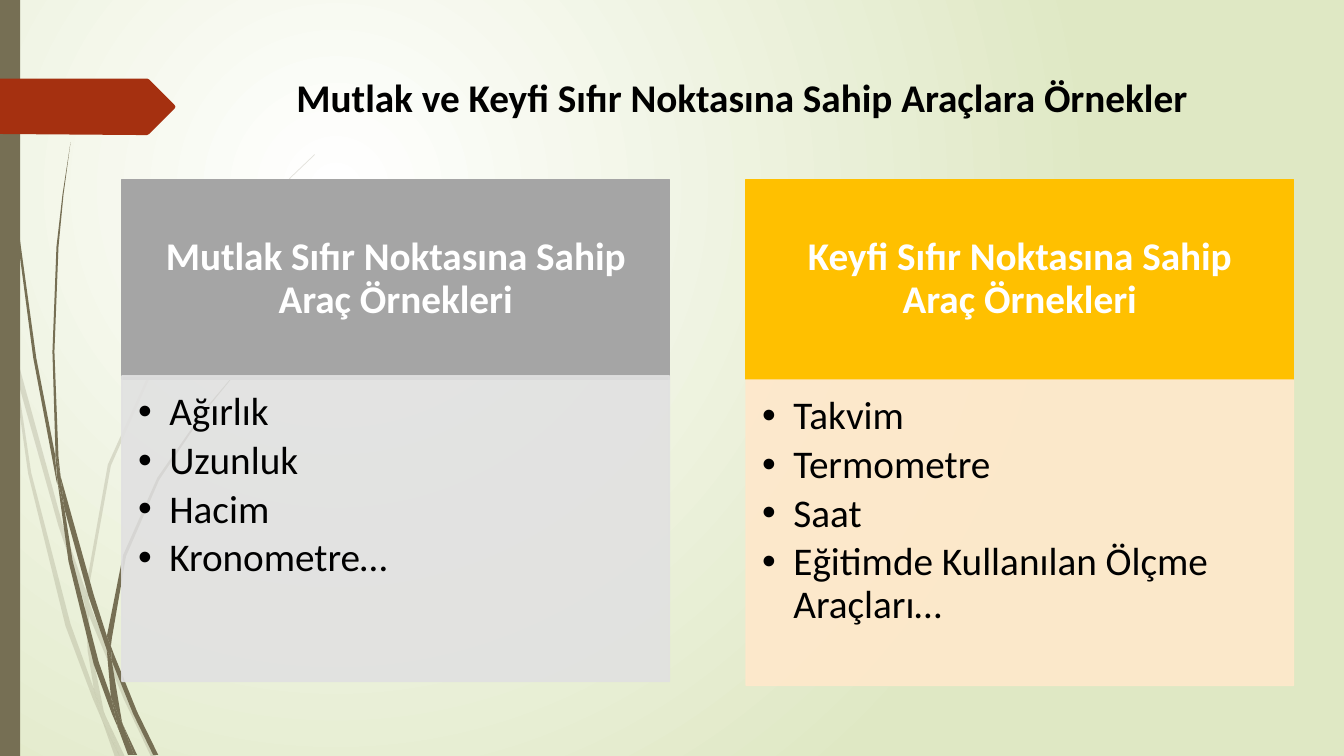
from lxml import etree
from pptx import Presentation, util as u
from pptx.dml.color import RGBColor
from pptx.enum import shapes, text
from pptx.oxml import ns

PX = 9144  # EMU in one px, 100 px to the inch
FONT, SIZE = "Calibri", 28
COLORS = {
    "glow": "FFFFFF", "meadow": "DFE8C4", "reed": "766F54", "ribbon": "A53010",
    "black": "000000", "white": "FFFFFF", "gray": "A5A5A5", "pale_gray": "E1E1E1",
    "amber": "FFC000", "pale_amber": "FFE8CB",
}

# Outlines of the reeds, as corner points in px
PALE_REEDS = [
    [(11, 350), (9, 322), (0, 282), (0, 299), (10, 344)],
    [(58, 522), (84, 599), (85, 586), (62, 520), (14, 345), (17, 376)],
    [(92, 607), (88, 596), (88, 610), (123, 694), (150, 751), (155, 751), (127, 692)],
    [(119, 751), (124, 751), (105, 711)],
    [(93, 683), (70, 619), (31, 469), (17, 376), (11, 350), (28, 470), (65, 621),
     (92, 693), (101, 714), (99, 707)],
    [(84, 599), (87, 646), (93, 683), (96, 692), (105, 711), (103, 706), (91, 646),
     (88, 610), (88, 608)],
    [(88, 584), (110, 462), (160, 349), (229, 245), (268, 198), (290, 175), (312, 154),
     (312, 153), (289, 175), (268, 197), (228, 244), (158, 348), (107, 461), (85, 584),
     (85, 586), (88, 596)],
    [(101, 714), (114, 751), (119, 751)],
    [(88, 608), (88, 610), (88, 596), (85, 586), (84, 599)],
    [(96, 692), (93, 683), (99, 707), (101, 714), (119, 751), (105, 711)],
]
DARK_REEDS = [
    [(7, 110), (17, 233), (33, 355), (56, 477), (57, 481), (55, 457), (55, 453),
     (36, 355), (19, 232), (8, 109), (5, 48), (4, 0), (3, 0), (4, 48)],
    [(88, 592), (106, 645), (106, 633), (106, 631), (93, 590), (60, 472), (64, 505)],
    [(113, 649), (110, 641), (111, 656), (132, 708), (152, 749), (157, 749), (136, 706)],
    [(110, 691), (98, 657), (72, 556), (64, 505), (57, 477), (68, 557), (93, 659),
     (111, 708), (117, 722), (116, 717)],
    [(60, 472), (58, 453), (54, 349), (58, 245), (63, 193), (70, 141), (62, 193),
     (56, 245), (52, 349), (55, 449)],
    [(133, 749), (136, 749), (122, 719)],
    [(57, 477), (64, 505), (60, 472), (55, 449), (55, 453)],
    [(111, 633), (125, 552), (158, 476), (205, 406), (231, 374), (245, 359), (261, 344),
     (260, 344), (245, 358), (231, 373), (204, 405), (156, 474), (122, 551), (106, 631),
     (110, 641)],
    [(117, 722), (127, 749), (131, 749)],
    [(106, 645), (110, 691), (116, 706), (122, 719), (121, 716), (111, 656), (109, 651)],
    [(106, 645), (109, 651), (111, 656), (110, 641), (106, 631), (106, 633)],
    [(116, 706), (110, 691), (116, 717), (117, 722), (130, 749), (133, 749), (122, 719)],
]
RIBBON = [(173, 108), (148, 133), (146, 134), (136, 134), (0, 133), (0, 78), (146, 78),
          (148, 79), (173, 104), (174, 106)]

# Left edge, top of the list, header and list colours, header, list items
COLUMNS = [
    (121, 373, "gray", "pale_gray", "Mutlak Sıfır Noktasına Sahip Araç Örnekleri",
     ["Ağırlık", "Uzunluk", "Hacim", "Kronometre…"]),
    (740, 377, "amber", "pale_amber", "Keyfi Sıfır Noktasına Sahip Araç Örnekleri",
     ["Takvim", "Termometre", "Saat", "Eğitimde Kullanılan Ölçme Araçları…"]),
]


def px(*lengths):
    return [u.Emu(length * PX) for length in lengths]


def rgb(name):
    return RGBColor.from_string(COLORS[name])


class Deck:
    def __init__(self):
        self.presentation = Presentation()
        self.presentation.slide_width, self.presentation.slide_height = px(1333, 750)
        self.slide = self.presentation.slides.add_slide(self.presentation.slide_layouts[5])

    def background(self, center, edge):
        fill = self.slide.background.fill
        fill.gradient()
        for stop, name in zip(fill.gradient_stops, (center, edge)):
            stop.color.rgb = rgb(name)
        gradient = self.slide.element.find(".//" + ns.qn("a:gradFill"))
        gradient.remove(gradient.find(ns.qn("a:lin")))
        circle = etree.SubElement(gradient, ns.qn("a:path"), path="circle")
        etree.SubElement(circle, ns.qn("a:fillToRect"),
                         l="50000", t="50000", r="100000", b="100000")

    def paint(self, shape, color, opacity=100, outline=False):
        shape.shadow.inherit = False
        fills = [shape.fill]
        if outline:
            shape.line.width = u.Pt(1)
            fills.append(shape.line.fill)
        else:
            shape.line.fill.background()
        for fill in fills:
            fill.solid()
            fill.fore_color.rgb = rgb(color)
        if opacity < 100:
            for node in shape.element.spPr.iter(ns.qn("a:srgbClr")):
                etree.SubElement(node, ns.qn("a:alpha"), val=str(opacity * 1000))

    def outline(self, points, color, opacity=100, parent=None):
        builder = (parent or self.slide).shapes.build_freeform(*points[0], scale=PX)
        builder.add_line_segments(points[1:], close=True)
        self.paint(builder.convert_to_shape(), color, opacity)

    def reeds(self, outlines, opacity):
        group = self.slide.shapes.add_group_shape()
        for points in outlines:
            self.outline(points, "reed", opacity, group)

    def box(self, place, color, opacity=100, outline=False):
        shape = self.slide.shapes.add_shape(shapes.MSO_SHAPE.RECTANGLE, *px(*place))
        self.paint(shape, color, opacity, outline)
        return shape

    def set_text(self, shape, lines, color, insets, bold=False, align=text.PP_ALIGN.LEFT,
                 anchor=text.MSO_ANCHOR.TOP, spacing=1.0):
        frame = shape.text_frame
        frame.text = "\n".join(lines)
        frame.word_wrap, frame.vertical_anchor = True, anchor
        (frame.margin_left, frame.margin_top,
         frame.margin_right, frame.margin_bottom) = px(*insets)
        for paragraph in frame.paragraphs:
            paragraph.alignment, paragraph.line_spacing = align, spacing
            for run in paragraph.runs:
                run.font.name, run.font.size, run.font.bold = FONT, u.Pt(SIZE), bold
                run.font.color.rgb = rgb(color)

    def title(self, place, line):
        shape = self.slide.shapes.title
        shape.left, shape.top, shape.width, shape.height = px(*place)
        self.set_text(shape, [line], "black", (10, 5, 10, 5), bold=True)

    def header(self, place, color, line):
        self.set_text(self.box(place, color, outline=True), [line], "white",
                      (22, 12, 22, 12), bold=True, align=text.PP_ALIGN.CENTER,
                      anchor=text.MSO_ANCHOR.MIDDLE, spacing=0.9)

    def bullets(self, place, color, lines):
        shape = self.box(place, color, opacity=90, outline=True)
        self.set_text(shape, lines, "black", (16, 16, 22, 24), spacing=0.9)
        indent = 31 * PX
        for paragraph in shape.text_frame.paragraphs:
            paragraph.space_after = u.Pt(4.5)
            properties = paragraph._p.get_or_add_pPr()
            properties.set("marL", str(indent))
            properties.set("indent", str(-indent))
            etree.SubElement(properties, ns.qn("a:buFont"), typeface="Arial")
            etree.SubElement(properties, ns.qn("a:buChar"), char="•")


def main():
    deck = Deck()

    # Backdrop: gradient, reeds, side bar and ribbon
    deck.background("glow", "meadow")
    deck.reeds(PALE_REEDS, 20)
    deck.reeds(DARK_REEDS, 100)
    deck.box((0, 0, 20, 750), "reed")
    deck.outline(RIBBON, "ribbon")

    # Title
    deck.title((284, 68, 975, 82), "Mutlak ve Keyfi Sıfır Noktasına Sahip Araçlara Örnekler")

    # Two columns
    for left, list_top, strong, pale, heading, items in COLUMNS:
        deck.header((left, 178, 543, 198), strong, heading)
        deck.bullets((left, list_top, 543, 303), pale, items)

    deck.presentation.save("out.pptx")


if __name__ == "__main__":
    main()
